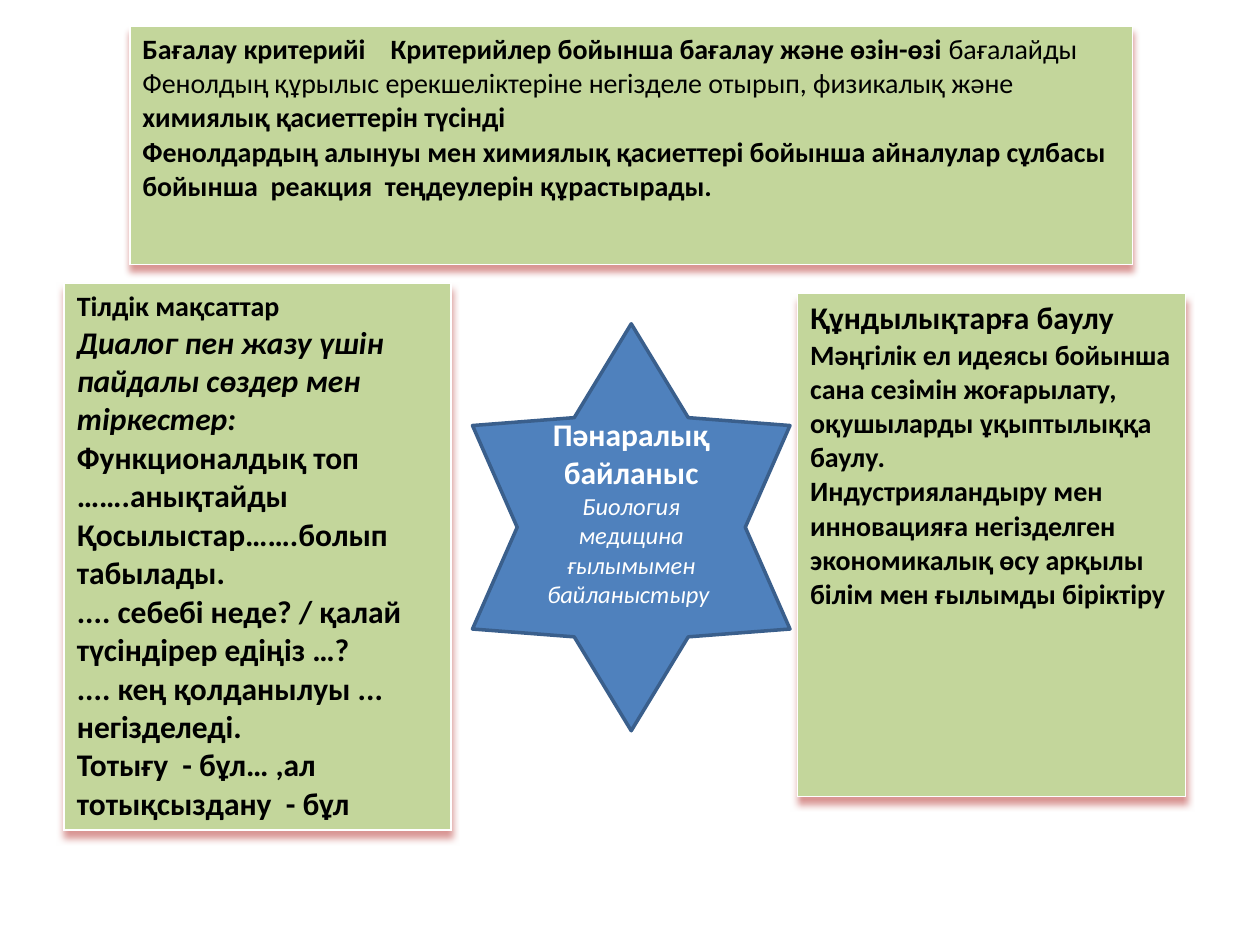
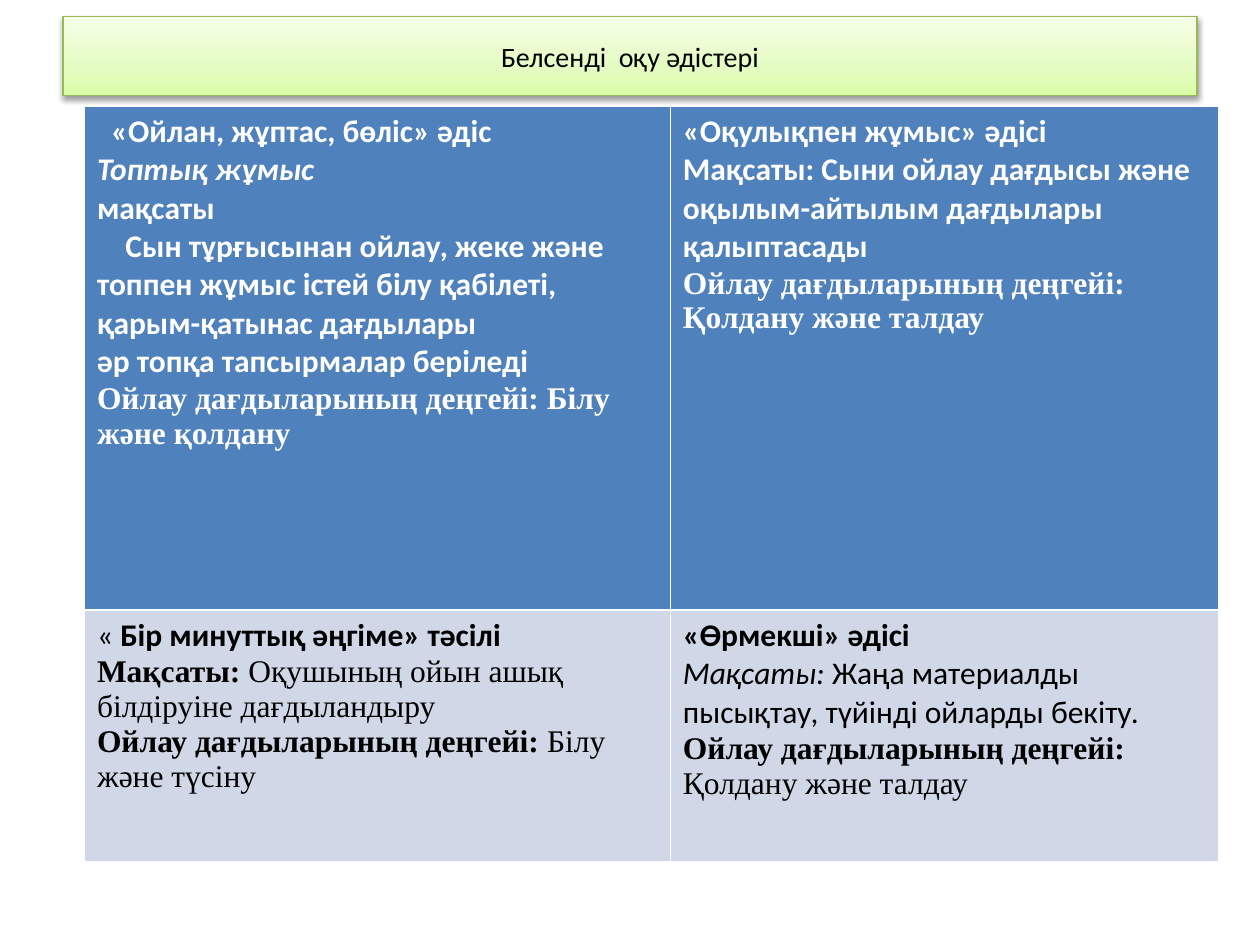
from copy import deepcopy

from lxml import etree
from pptx import Presentation
from pptx.dml.color import RGBColor
from pptx.enum import shapes, text
from pptx.oxml import ns
from pptx.util import Inches, Pt

BLACK = RGBColor(0x00, 0x00, 0x00)
WHITE = RGBColor(0xFF, 0xFF, 0xFF)
GREEN = RGBColor(0xC3, 0xD6, 0x9B)
BLUE = RGBColor(0x4F, 0x81, 0xBD)
DARK_BLUE = RGBColor(0x3A, 0x5F, 0x8C)
PALE_BLUE = RGBColor(0xD0, 0xD8, 0xE8)
ROSE = RGBColor(0xD9, 0x96, 0x94)
LIME_LINE = RGBColor(0x98, 0xB9, 0x55)
TITLE_GRADIENT = [
    (0, RGBColor(0xDA, 0xFD, 0xA7)),
    (0.35, RGBColor(0xE4, 0xFC, 0xC2)),
    (1, RGBColor(0xF5, 0xFF, 0xE7)),
]
SANS, SERIF = "Calibri", "Times New Roman"

# Each paragraph is (size, font, runs); each run is (text, style letters).
CRITERIA = [
    (16, SANS, [
        ("Бағалау критерийі    Критерийлер бойынша бағалау және өзін-өзі ", "b"),
        ("бағалайды\nФенолдың құрылыс ерекшеліктеріне негізделе отырып, физикалық және ", ""),
        ("химиялық қасиеттерін түсінді\nФенолдардың алынуы мен химиялық қасиеттері бойынша "
         "айналулар сұлбасы бойынша  реакция  теңдеулерін құрастырады.", "b"),
    ]),
]
LANGUAGE_GOALS = [
    (16, SANS, [("Тілдік мақсаттар", "b")]),
    (18, SANS, [("Диалог пен жазу үшін пайдалы сөздер мен тіркестер:", "bi")]),
    (18, SANS, [("Функционалдық топ …….анықтайды", "b")]),
    (18, SANS, [("Қосылыстар…….болып табылады.", "b")]),
    (18, SANS, [(".... себебі неде? / қалай түсіндірер едіңіз …?", "b")]),
    (18, SANS, [(".... кең қолданылуы ... негізделеді.", "b")]),
    (18, SANS, [("Тотығу  - бұл… ,ал тотықсыздану  - бұл", "b")]),
]
VALUES = [
    (18, SANS, [("Құндылықтарға баулу", "b")]),
    (16, SANS, [("Мәңгілік ел идеясы бойынша сана сезімін жоғарылату, "
                 "оқушыларды ұқыптылыққа баулу.", "b")]),
    (16, SANS, [("Индустрияландыру мен инновацияға негізделген  экономикалық өсу арқылы "
                 "білім мен ғылымды біріктіру", "b")]),
]
SUBJECT_LINKS = [
    (18, SANS, [("Пəнаралық байланыс", "b")]),
    (14, SANS, [("Биология медицина ғылымымен байланыстыру ", "i")]),
]
GOAL_CARDS = [
    (1.03, 0.21, 7.96, 1.89, CRITERIA),
    (0.51, 2.25, 3.07, 4.27, LANGUAGE_GOALS),
    (6.33, 2.33, 3.08, 3.99, VALUES),
]

METHODS_TITLE = [(16, SANS, [("Белсенді  оқу әдістері", "")])]
THINKING_LEVEL = "Ойлау дағдыларының деңгейі:"
METHODS = [
    [
        [
            (18, SANS, [("  «Ойлан, жұптас, бөліс» әдіс", "b")]),
            (18, SANS, [("Топтық жұмыс", "bi")]),
            (18, SANS, [("мақсаты", "b")]),
            (18, SANS, [("    Сын тұрғысынан ойлау, жеке және топпен жұмыс істей білу қабілеті, "
                         "қарым-қатынас дағдылары", "b")]),
            (18, SANS, [("әр топқа тапсырмалар беріледі", "b")]),
            (18, SERIF, [(THINKING_LEVEL + " Білу және қолдану", "b")]),
        ],
        [
            (18, SANS, [("«Оқулықпен жұмыс» әдісі", "b")]),
            (18, SANS, [("Мақсаты: Сыни ойлау дағдысы және оқылым-айтылым дағдылары "
                         "қалыптасады", "b")]),
            (18, SERIF, [(THINKING_LEVEL + " Қолдану және талдау", "b")]),
        ],
    ],
    [
        [
            (18, SANS, [("« ", ""), ("Бір минуттық әңгіме» тәсілі", "b")]),
            (18, SERIF, [("Мақсаты: ", "b"), ("Оқушының ойын ашық білдіруіне дағдыландыру", "")]),
            (18, SERIF, [(THINKING_LEVEL, "b"), (" Білу және түсіну", "")]),
        ],
        [
            (18, SANS, [("«Өрмекші» әдісі", "b")]),
            (18, SANS, [("Мақсаты: ", "i"),
                        ("Жаңа материалды пысықтау, түйінді ойларды бекіту.", "")]),
            (18, SERIF, [(THINKING_LEVEL, "b"), (" Қолдану және талдау", "")]),
        ],
    ],
]


def write_text(frame, paragraphs, color, alignment=text.PP_ALIGN.LEFT):
    frame.word_wrap = True
    for index, (size, font_name, runs) in enumerate(paragraphs):
        paragraph = frame.paragraphs[0] if index == 0 else frame.add_paragraph()
        paragraph.alignment = alignment
        paragraph.font.size = Pt(size)
        paragraph.font.name = font_name
        for content, style in runs:
            for line_number, line in enumerate(content.split("\n")):
                if line_number:
                    paragraph.add_line_break()
                run = paragraph.add_run()
                run.text = line
                run.font.bold = "b" in style
                run.font.italic = "i" in style
                run.font.color.rgb = color


def make_shadow(color, opacity, blur, distance):
    effects = etree.Element(ns.qn("a:effectLst"))
    shadow = etree.SubElement(
        effects, ns.qn("a:outerShdw"), blurRad=str(Pt(blur)), dist=str(Pt(distance)),
        dir="5400000", algn="t", rotWithShape="0")
    shade = etree.SubElement(shadow, ns.qn("a:srgbClr"), val=str(color))
    etree.SubElement(shade, ns.qn("a:alpha"), val=str(opacity * 1000))
    return effects


def add_grid(slide, left, top, widths, heights, cells, row_styles):
    table = slide.shapes.add_table(
        len(heights), len(widths), Inches(left), Inches(top),
        Inches(sum(widths)), Inches(sum(heights))).table
    for column, width in zip(table.columns, widths):
        column.width = Inches(width)
    for row, height, contents, (fill, color) in zip(table.rows, heights, cells, row_styles):
        row.height = Inches(height)
        for cell, paragraphs in zip(row.cells, contents):
            cell.fill.solid()
            cell.fill.fore_color.rgb = fill
            write_text(cell.text_frame, paragraphs, color)
    return table


def add_links_star(slide):
    star = slide.shapes.add_shape(
        shapes.MSO_SHAPE.STAR_6_POINT, Inches(3.75), Inches(2.57), Inches(2.52), Inches(3.23))
    star.adjustments[0] = 0.311
    star.shadow.inherit = False
    star.fill.solid()
    star.fill.fore_color.rgb = BLUE
    star.line.color.rgb = DARK_BLUE
    star.line.width = Pt(2)
    star.text_frame.vertical_anchor = text.MSO_ANCHOR.MIDDLE
    star.text_frame.margin_bottom = Inches(0.29)
    write_text(star.text_frame, SUBJECT_LINKS, WHITE, text.PP_ALIGN.CENTER)


def build_goals(presentation):
    slide = presentation.slides.add_slide(presentation.slide_layouts[6])
    add_links_star(slide)
    for left, top, width, height, paragraphs in GOAL_CARDS:
        card = add_grid(slide, left, top, [width], [height], [[paragraphs]], [(GREEN, BLACK)])
        card._tbl.tblPr.insert(0, make_shadow(ROSE, 100, 4, 4))


def style_title(title):
    title.left, title.top = Inches(0.5), Inches(0.13)
    title.width, title.height = Inches(9), Inches(0.63)
    title.fill.gradient()
    title.fill.gradient_angle = 90
    properties = title._element.spPr
    stops = properties.find(".//" + ns.qn("a:gsLst"))
    stops.insert(1, deepcopy(stops[0]))
    for stop, (position, color) in zip(title.fill.gradient_stops, TITLE_GRADIENT):
        stop.position = position
        stop.color.rgb = color
    title.line.color.rgb = LIME_LINE
    title.line.width = Pt(0.75)
    properties.append(make_shadow(BLACK, 38, 3.1, 1.6))
    title.text_frame.vertical_anchor = text.MSO_ANCHOR.MIDDLE
    write_text(title.text_frame, METHODS_TITLE, BLACK, text.PP_ALIGN.CENTER)


def build_methods(presentation):
    slide = presentation.slides.add_slide(presentation.slide_layouts[5])
    style_title(slide.shapes.title)
    add_grid(slide, 0.67, 0.84, [4.65, 4.35], [4, 2], METHODS,
             [(BLUE, WHITE), (PALE_BLUE, BLACK)])


def main():
    presentation = Presentation()
    presentation.slide_width = Inches(10)
    presentation.slide_height = Inches(7.5)
    build_goals(presentation)
    build_methods(presentation)
    presentation.save("out.pptx")


if __name__ == "__main__":
    main()
